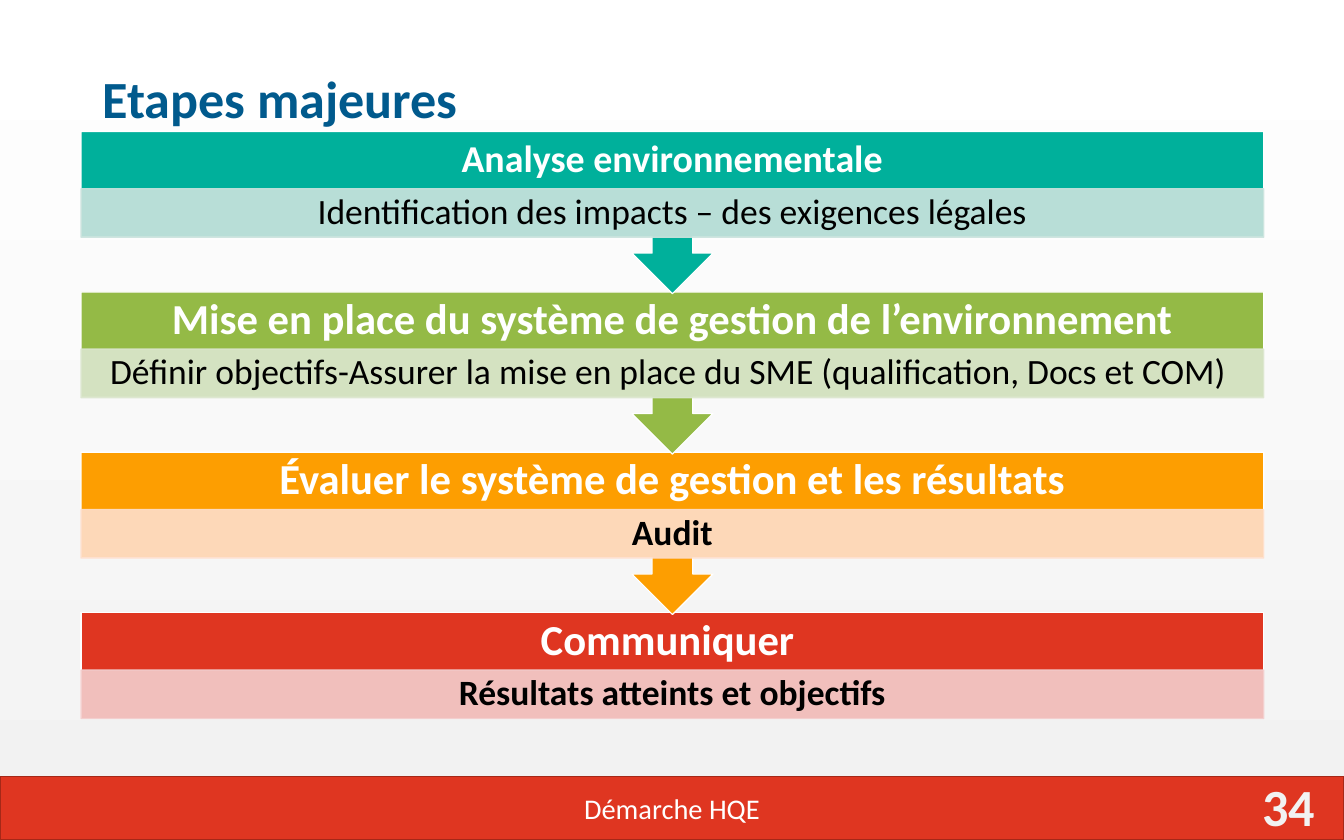
from dataclasses import dataclass

from lxml.etree import SubElement
from pptx import Presentation
from pptx.dml.color import RGBColor
from pptx.enum.shapes import MSO_SHAPE
from pptx.enum.text import MSO_ANCHOR, PP_ALIGN
from pptx.oxml.ns import qn
from pptx.util import Inches, Pt

WIDTH, HEIGHT = Inches(15.75), Inches(9.84)
FONT = "Calibri"
WHITE, PALE, BLACK = "FFFFFF", "F2F2F2", "000000"
RED, DARK_RED, BLUE = "DF3621", "A52818", "015A8D"

# Step layout, in percent of the slide's width and height
LEFT, SPAN = 6.03, 88
TOP, PITCH = 15.65, 19.1
HEADER, DETAIL = 6.81, 5.79
CALLOUT, LAST_BLOCK = 19.31, 12.6


@dataclass(frozen=True)
class Box:
    left: float
    top: float
    width: float
    height: float

    def place(self) -> tuple[int, int, int, int]:
        return (round(WIDTH * self.left / 100), round(HEIGHT * self.top / 100),
                round(WIDTH * self.width / 100), round(HEIGHT * self.height / 100))


@dataclass(frozen=True)
class Step:
    heading: str
    detail: str
    color: str
    tint: str
    heading_size: int = 36
    detail_bold: bool = False


STEPS = [
    Step("Analyse environnementale", "Identification des impacts – des exigences légales",
         "00B09B", "CCE4DE", heading_size=32),
    Step("Mise en place du système de gestion de l’environnement",
         "Définir objectifs-Assurer la mise en place du SME (qualification, Docs et COM) ",
         "94BA46", "DCE7CF"),
    Step("Évaluer le système de gestion et les résultats", "Audit",
         "FD9E01", "FEDFCC", detail_bold=True),
    Step("Communiquer ", "Résultats atteints et objectifs",
         RED, "F3CECD", detail_bold=True),
]


def set_color(target, value: str, opacity: int = 100) -> None:
    """Colour a solid fill, with optional transparency."""
    target.solid()
    target.fore_color.rgb = RGBColor.from_string(value)
    if opacity < 100:
        color = target._xPr.find(f".//{qn('a:srgbClr')}")
        SubElement(color, qn("a:alpha"), val=str(opacity * 1000))


def write(shape, text: str, *, size: int, color: str, bold: bool = False,
          align=PP_ALIGN.CENTER, spacing: float = 1.0,
          inset: tuple[float, float] = (0.12, 0.06)) -> None:
    frame = shape.text_frame
    frame.word_wrap = True
    frame.vertical_anchor = MSO_ANCHOR.MIDDLE
    frame.margin_left = frame.margin_right = Inches(inset[0])
    frame.margin_top = frame.margin_bottom = Inches(inset[1])
    paragraph = frame.paragraphs[0]
    paragraph.alignment = align
    paragraph.line_spacing = spacing
    run = paragraph.add_run()
    run.text = text
    run.font.name, run.font.size, run.font.bold = FONT, Pt(size), bold
    run.font.color.rgb = RGBColor.from_string(color)


def add_block(slide, kind, box: Box, fill: str, line: str, opacity: int = 100):
    shape = slide.shapes.add_shape(kind, *box.place())
    shape.shadow.inherit = False
    set_color(shape.fill, fill, opacity)
    set_color(shape.line.fill, line, opacity)
    shape.line.width = Pt(1)
    return shape


def add_text(slide, box: Box, text: str, **style) -> None:
    write(slide.shapes.add_textbox(*box.place()), text, **style)


def add_step(slide, index: int, step: Step) -> None:
    top = TOP + index * PITCH
    # Coloured block, pointing down to the next step
    if index == len(STEPS) - 1:
        add_block(slide, MSO_SHAPE.RECTANGLE, Box(LEFT, top, SPAN, LAST_BLOCK),
                  step.color, WHITE)
    else:
        callout = add_block(slide, MSO_SHAPE.UP_ARROW_CALLOUT,
                            Box(LEFT, top, SPAN, CALLOUT), step.color, WHITE)
        callout.rotation = 180
    margin = step.heading_size / 128
    add_text(slide, Box(LEFT, top, SPAN, HEADER), step.heading, size=step.heading_size,
             color=WHITE, bold=True, spacing=0.9, inset=(margin, margin))
    # Tinted detail band
    band = add_block(slide, MSO_SHAPE.RECTANGLE, Box(LEFT, top + HEADER, SPAN, DETAIL),
                     step.tint, step.tint, opacity=90)
    write(band, step.detail, size=30, color=BLACK, bold=step.detail_bold,
          spacing=0.9, inset=(0.23, 0.04))


def main() -> None:
    presentation = Presentation()
    presentation.slide_width, presentation.slide_height = WIDTH, HEIGHT
    slide = presentation.slides.add_slide(presentation.slide_layouts[6])

    # Background
    background = slide.background.fill
    background.gradient()
    background.gradient_angle = 270
    for stop, color in zip(background.gradient_stops, (WHITE, PALE)):
        stop.color.rgb = RGBColor.from_string(color)

    # Footer
    footer = add_block(slide, MSO_SHAPE.RECTANGLE, Box(0, 92.45, 100, 7.55), RED, DARK_RED)
    write(footer, "Démarche HQE", size=24, color=WHITE)
    add_text(slide, Box(92.5, 93.2, 6.1, 5.3), "34", size=44, color=PALE, bold=True,
             align=PP_ALIGN.RIGHT)

    # Title
    add_text(slide, Box(6.86, 5.3, 86.2, 13.5), "Etapes majeures", size=44, color=BLUE,
             bold=True, align=PP_ALIGN.LEFT, spacing=0.9)

    # Steps, last first so that each arrow tip lies over the next block
    for index, step in reversed(list(enumerate(STEPS))):
        add_step(slide, index, step)

    presentation.save("out.pptx")


if __name__ == "__main__":
    main()
